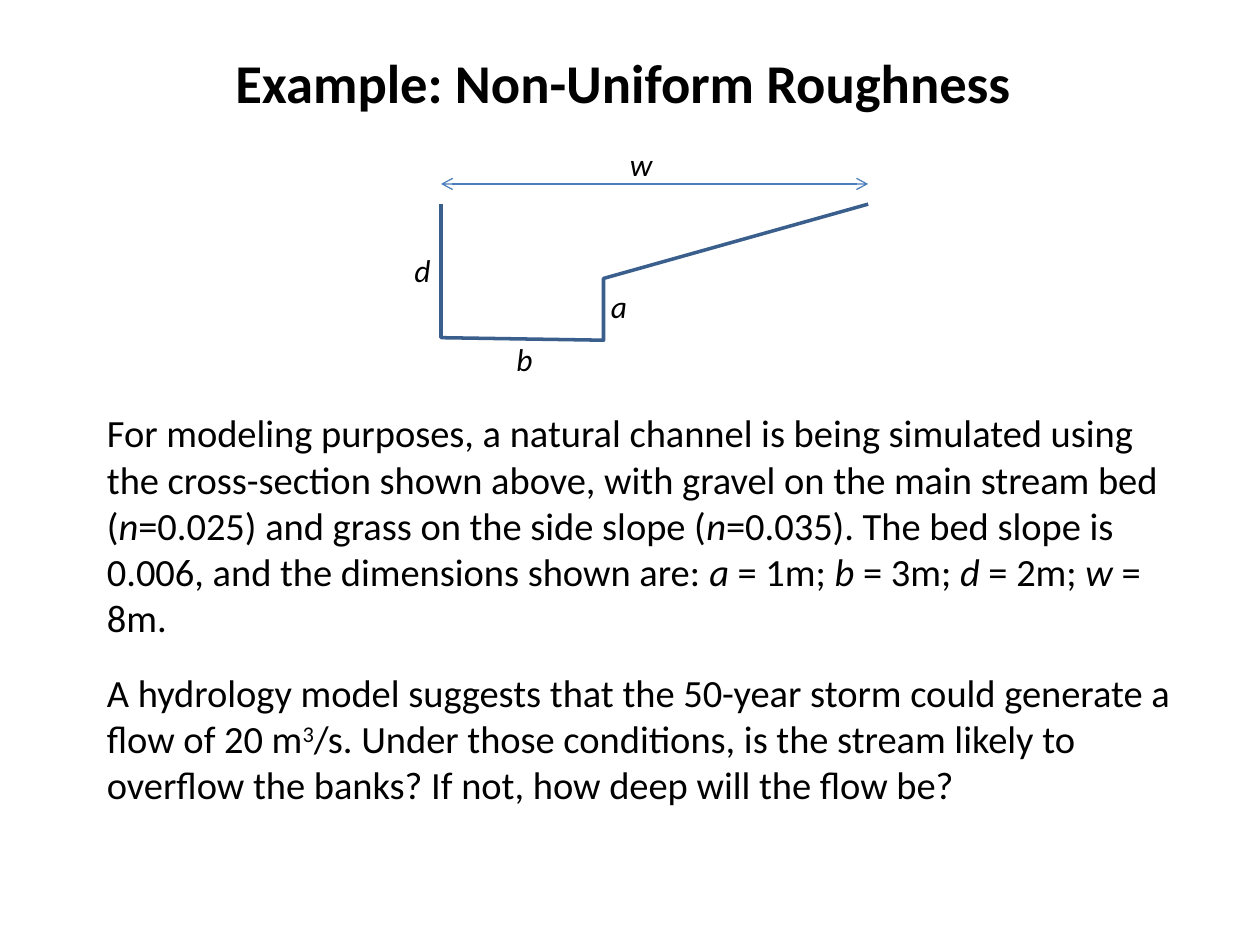
import pptx
import pptx.dml.color
import pptx.enum.shapes
import pptx.enum.text
import pptx.oxml
import pptx.util
from pptx.util import Inches, Pt


def color(hex_value):
    return pptx.dml.color.RGBColor.from_string(hex_value)


def style(font, size):
    font.name = "Calibri"
    font.size = Pt(size)
    font.color.rgb = color("000000")


prs = pptx.Presentation()
prs.slide_width, prs.slide_height = Inches(10), Inches(7.5)
s = prs.slides.add_slide(prs.slide_layouts[5])

# Title
title = s.shapes.title
title.left, title.top = Inches(1.46), Inches(0.29)
title.width, title.height = Inches(6.97), Inches(0.71)
tf = title.text_frame
tf.text = "Example: Non-Uniform Roughness"
tf.auto_size = pptx.enum.text.MSO_AUTO_SIZE.NONE
tf.vertical_anchor = pptx.enum.text.MSO_ANCHOR.MIDDLE
p = tf.paragraphs[0]
p.alignment = pptx.enum.text.PP_ALIGN.CENTER
style(p.font, 31.2)
p.font.bold = True

# Problem statement: _ surrounds italics, ^ surrounds a superscript
paragraphs = [
    "For modeling purposes, a natural channel is being simulated using the "
    "cross-section shown above, with gravel on the main stream bed (_n_=0.025) "
    "and grass on the side slope (_n_=0.035). The bed slope is 0.006, and the "
    "dimensions shown are: _a_ = 1m; _b_ = 3m; _d_ = 2m; _w_ = 8m.",
    "A hydrology model suggests that the 50-year storm could generate a flow of "
    "20 m^3^/s. Under those conditions, is the stream likely to overflow the "
    "banks? If not, how deep will the flow be?",
]
body = s.shapes.add_textbox(Inches(0.75), Inches(3.2), Inches(8.79), Inches(3.39))
tf = body.text_frame
tf.word_wrap = True
for i, text in enumerate(paragraphs):
    p = tf.paragraphs[0] if i == 0 else tf.add_paragraph()
    style(p.font, 22)
    p.space_before, p.space_after = Pt(4.4), Pt(12)
    for j, part in enumerate(text.split("_")):
        for k, piece in enumerate(part.split("^")):
            r = p.add_run()
            r.text = piece
            if j % 2:
                r.font.italic = True
            if k % 2:
                r.font._element.set("baseline", "30000")

# Channel cross-section
outline = [(3.5, 1.62), (3.5, 2.68), (4.79, 2.7), (4.79, 2.21), (6.89, 1.62)]
points = [(Inches(x), Inches(y)) for x, y in outline]
builder = s.shapes.build_freeform(*points[0])
builder.add_line_segments(points[1:], close=False)
channel = builder.convert_to_shape()
channel.shadow.inherit = False
channel.fill.background()
channel.line.color.rgb = color("3A5F8C")
channel.line.width = Pt(2)

# Width arrow
arrow = s.shapes.add_connector(
    pptx.enum.shapes.MSO_CONNECTOR.STRAIGHT,
    Inches(3.5), Inches(1.46), Inches(6.89), Inches(1.46))
arrow.line.color.rgb = color("4B7EBC")
arrow.line.width = Pt(0.75)
ln = arrow.line._get_or_add_ln()
for end in ("a:headEnd", "a:tailEnd"):
    ln.append(pptx.oxml.xmlchemy.OxmlElement(end))
    ln[-1].set("type", "arrow")
arrow._element.spPr.append(pptx.oxml.xmlchemy.OxmlElement("a:effectLst"))

# Dimension labels
for text, x, y in [("a", 4.75, 2.23), ("b", 4, 2.65), ("d", 3.19, 1.94), ("w", 4.9, 1.1)]:
    label = s.shapes.add_textbox(Inches(x), Inches(y), Inches(0.53), Inches(0.5))
    tf = label.text_frame
    tf.word_wrap = True
    tf.text = text
    p = tf.paragraphs[0]
    style(p.font, 18)
    p.font.italic = True

prs.save("out.pptx")
